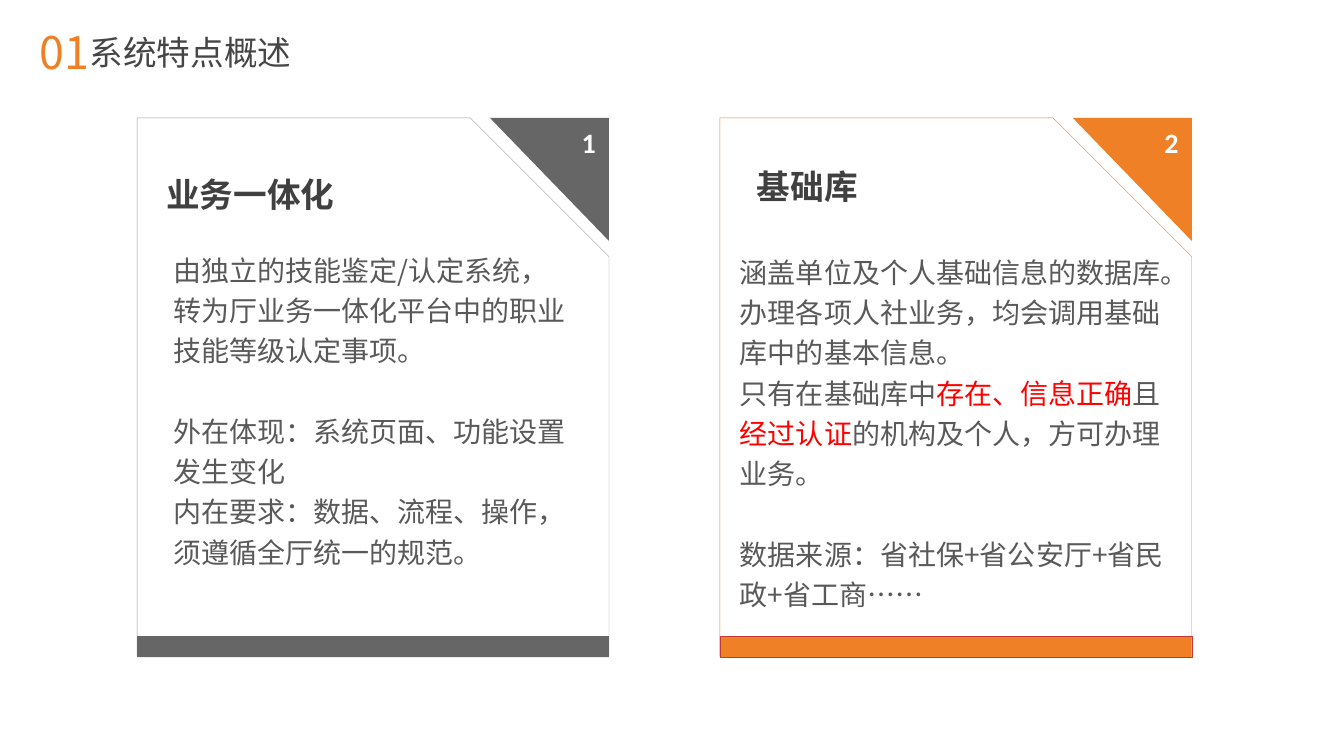
from pptx import Presentation
from pptx.dml.color import RGBColor
from pptx.enum.shapes import MSO_SHAPE
from pptx.enum.text import MSO_ANCHOR, MSO_AUTO_SIZE, PP_ALIGN
from pptx.oxml.ns import qn
from pptx.util import Inches, Pt

SNIPPED, BAR = MSO_SHAPE.SNIP_1_RECTANGLE, MSO_SHAPE.RECTANGLE
TOP, NO_FIT = MSO_ANCHOR.TOP, MSO_AUTO_SIZE.NONE
LEFT, RIGHT, JUSTIFY = PP_ALIGN.LEFT, PP_ALIGN.RIGHT, PP_ALIGN.JUSTIFY

COLORS = {
    "white": "FFFFFF", "gray": "666666", "silver": "999999", "orange": "F08025",
    "crimson": "C33736", "red": "FF0000", "title": "454545", "heading": "404040",
    "body": "595959",
}
SANS, LATIN = "Noto Sans CJK SC", "Calibri"
BASELINE_SHIFT = 0.09

CARD_TOP, CARD_WIDTH, CARD_HEIGHT = 1.17, 4.68, 5.34
BAR_TOP, BAR_HEIGHT = 6.31, 0.21
CORNER_WIDTH, CORNER_HEIGHT = 1.18, 1.22
CARD_LEFT, CARD_STEP = 1.36, 5.78

cards = [
    {
        "fill": "gray", "outline": "silver", "bar_line": None,
        "heading": "业务一体化", "heading_at": (1.55, 1.57, 3.25, 0.78),
        "body_at": (1.62, 2.37, 4.17, 3.57), "gap_before": 1,
        "body": [
            [("由独立的技能鉴定/认定系统，转为厅业务一体化平台中的职业技能等级认定事项。", "body")],
            [("外在体现：系统页面、功能设置发生变化", "body")],
            [("内在要求：数据、流程、操作，须遵循全厅统一的规范。", "body")],
        ],
    },
    {
        "fill": "orange", "outline": "orange", "bar_line": "crimson",
        "heading": "基础库", "heading_at": (7.41, 1.49, 1.3, 0.59),
        "body_at": (7.24, 2.39, 4.5, 3.9), "gap_before": 3,
        "body": [
            [("涵盖单位及个人基础信息的数据库。", "body")],
            [("办理各项人社业务，均会调用基础库中的基本信息。", "body")],
            [("只有在基础库中", "body"), ("存在、信息正确", "red"), ("且", "body"),
             ("经过认证", "red"), ("的机构及个人，方可办理业务。", "body")],
            [("数据来源：省社保+省公安厅+省民政+省工商……", "body")],
        ],
    },
]


def paint(shape, fill, line=None):
    shape.shadow.inherit = False
    shape.fill.solid()
    shape.fill.fore_color.rgb = RGBColor.from_string(COLORS[fill])
    if line:
        shape.line.color.rgb = RGBColor.from_string(COLORS[line])
        shape.line.width = Pt(0.25)
    else:
        shape.line.fill.background()


def write(box, paragraphs, size, leading=None, font=SANS, bold=False, align=LEFT, at=None, gap_before=None):
    if at:
        left, top, width, height = at
        top += BASELINE_SHIFT * size / 72
        place = {"left": left, "top": top, "width": width, "height": height}
        for name, value in place.items():
            setattr(box, name, Inches(value))
    frame = box.text_frame
    settings = {"word_wrap": True, "auto_size": NO_FIT, "vertical_anchor": TOP}
    for name, value in settings.items():
        setattr(frame, name, value)
    for index, spans in enumerate(paragraphs):
        para = frame.add_paragraph() if index else frame.paragraphs[0]
        para.alignment = align
        if leading:
            para.line_spacing = Pt(size * leading)
        if index == gap_before:
            para.space_before = Pt(size * leading)
        for text, color in spans:
            span = para.add_run()
            span.text = text
            for name, value in {"name": font, "size": Pt(size), "bold": bold}.items():
                setattr(span.font, name, value)
            span.font.color.rgb = RGBColor.from_string(COLORS[color])
            east_asian = span.font._element.makeelement(qn("a:ea"), {"typeface": font})
            span.font._element.append(east_asian)


deck = Presentation()
deck.slide_width, deck.slide_height = Inches(13.33), Inches(7.5)
page = deck.slides.add_slide(deck.slide_layouts[5])
shapes = page.shapes

for index, card in enumerate(cards):
    left = CARD_LEFT + index * CARD_STEP
    right = left + CARD_WIDTH

    panel = shapes.add_shape(SNIPPED, Inches(left), Inches(CARD_TOP), Inches(CARD_WIDTH), Inches(CARD_HEIGHT))
    panel.adjustments[0] = 0.294
    paint(panel, "white", card["outline"])

    bar = shapes.add_shape(BAR, Inches(left), Inches(BAR_TOP), Inches(CARD_WIDTH), Inches(BAR_HEIGHT))
    paint(bar, card["fill"], card["bar_line"])

    builder = shapes.build_freeform(Inches(right), Inches(CARD_TOP))
    builder.add_line_segments([
        (Inches(right - CORNER_WIDTH), Inches(CARD_TOP)),
        (Inches(right), Inches(CARD_TOP + CORNER_HEIGHT)),
    ])
    corner = builder.convert_to_shape()
    paint(corner, card["fill"])
    insets = {"margin_left": 0.13, "margin_right": 0.13, "margin_top": 0.07, "margin_bottom": 0.07}
    for name, value in insets.items():
        setattr(corner.text_frame, name, Inches(value))
    write(corner, [[(str(index + 1), "white")]], 20, font=LATIN, bold=True, align=RIGHT)

    body = shapes.add_textbox(0, 0, 0, 0)
    write(body, card["body"], 20, 1.44, at=card["body_at"], gap_before=card["gap_before"])
    heading = shapes.add_textbox(0, 0, 0, 0)
    write(heading, [[(card["heading"], "heading")]], 24, 1.44, bold=True, align=JUSTIFY, at=card["heading_at"])

number = shapes.add_textbox(0, 0, 0, 0)
write(number, [[("01", "orange")]], 32, 1.2, at=(0.29, 0.16, 1.01, 0.64))
write(shapes.title, [[("系统特点概述", "title")]], 24, 1.2, at=(0.79, 0.24, 2.8, 0.5))

deck.save("out.pptx")
